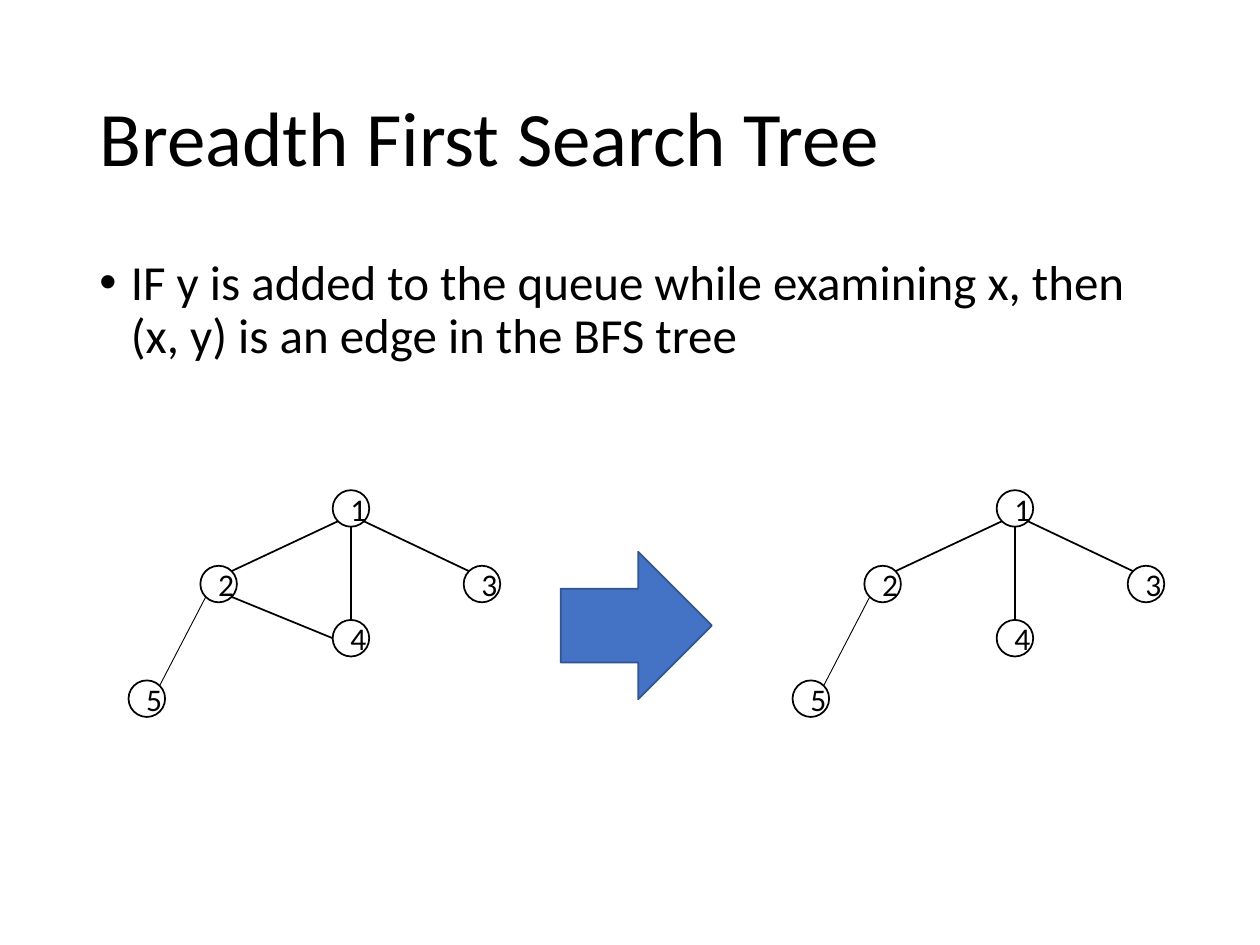
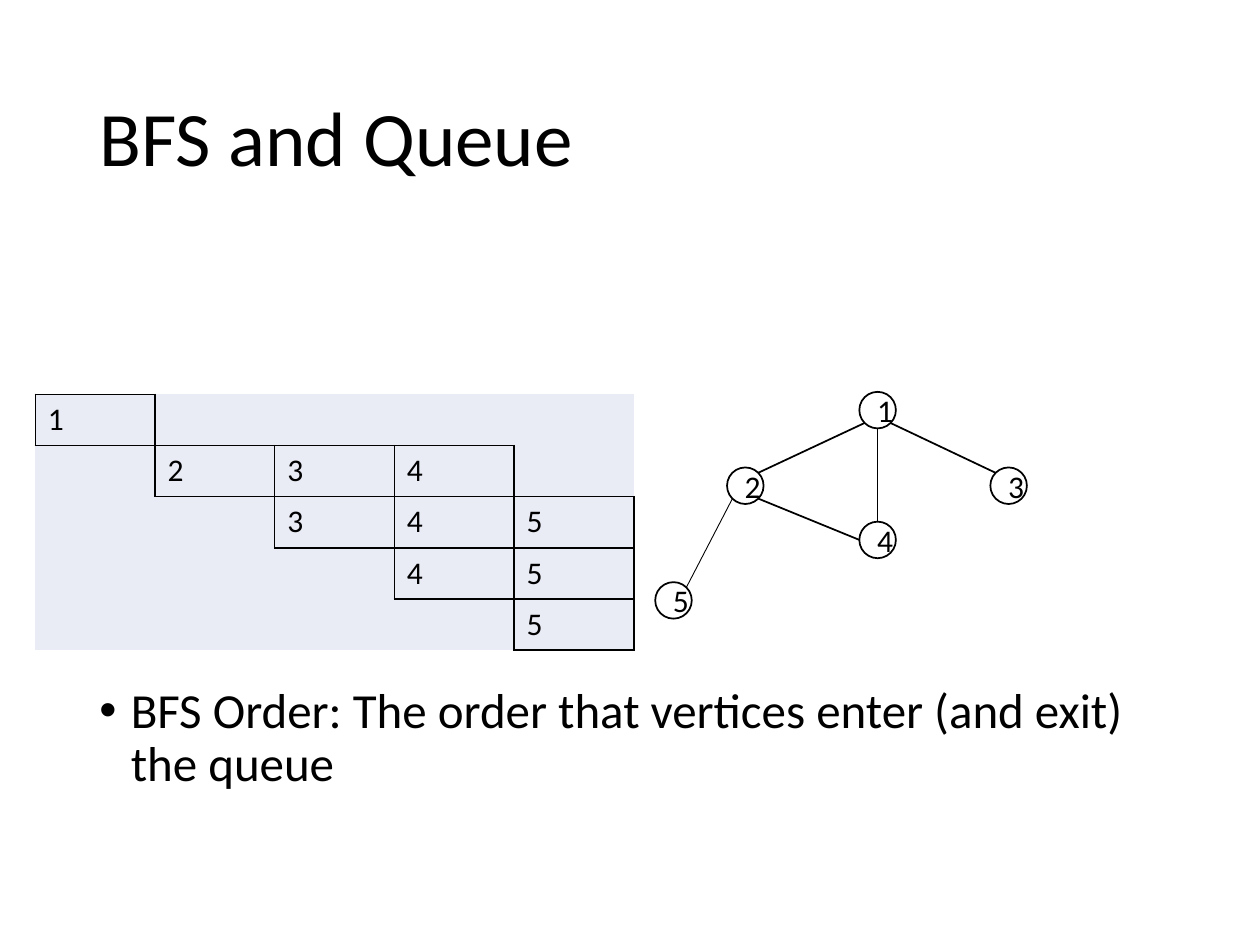
from lxml import etree
from pptx import Presentation
from pptx.dml.color import RGBColor
from pptx.enum.shapes import MSO_CONNECTOR, MSO_SHAPE
from pptx.enum.text import MSO_ANCHOR, PP_ALIGN
from pptx.oxml.ns import qn
from pptx.util import Inches, Pt

# Content: places are (columns, rows) on a grid of 10 by 7.5 one-inch units
COLUMNS, ROWS = 10, 7.5
COLORS = {"ink": "000000", "paper": "FFFFFF", "arrow": "4472C4",
          "arrow_edge": "325491", "cell": "E9EBF5"}
FONT = "Calibri"

TITLE_BOX = (0.69, 0.4, 8.62, 1.45)
NODE_SIZE = 0.29
NODES = {"1": (0, 0), "4": (0, 1.03), "2": (-1.05, 0.6),
         "3": (1.04, 0.6), "5": (-1.62, 1.51)}  # offsets from node 1
SITES = {"top": (0.5, 0), "bottom": (0.5, 1), "left": (0, 0.5),
         "top right": (0.85, 0.15), "bottom right": (0.85, 0.85),
         "bottom left": (0.15, 0.85)}  # shares of a node
TREE_EDGES = [  # from node, site, to node, site, width
    ("2", "top right", "1", "bottom left", 1),
    ("1", "bottom right", "3", "top", 1),
    ("1", "bottom", "4", "top", 1),
    ("2", "bottom left", "5", "top right", 0.5),
]
SITES["top left"] = (0.15, 0.15)
TREE_EDGES[1] = ("1", "bottom right", "3", "top left", 1)
GRAPH_EDGES = TREE_EDGES + [("4", "left", "2", "bottom right", 1)]

SLIDES = [
    {"title": "Breadth First Search Tree",
     "bullet": ["IF y is added to the queue while examining x, then",
                "(x, y) is an edge in the BFS tree"],
     "bullet_box": (0.69, 2, 8.92, 4.76),
     "graphs": [((2.64, 3.89), GRAPH_EDGES), ((7.91, 3.89), TREE_EDGES)],
     "arrow_box": (4.45, 4.38, 1.2, 1.17)},
    {"title": "BFS and Queue",
     "bullet": ["BFS Order: The order that vertices enter (and exit) the queue"],
     "bullet_box": (0.69, 5.4, 8.62, 1.36),
     "graphs": [((6.82, 3.11), GRAPH_EDGES)],
     "queue_box": (0.28, 3.13, 4.75, 2.03),
     "queue": [["1", "", "", "", ""],
               ["", "2", "3", "4", ""],
               ["", "", "3", "4", "5"],
               ["", "", "", "4", "5"],
               ["", "", "", "", "5"]]},
]

# Formats
TITLE = {"size": 44, "paragraph": {"line_spacing": 0.9}}
BULLET = {"size": 28, "paragraph": {"line_spacing": 0.9, "space_before": Pt(10)}}
NODE = {"size": 18, "paragraph": {"alignment": PP_ALIGN.CENTER}}
CELL = {"size": 18, "paragraph": {"alignment": PP_ALIGN.LEFT}}
PLAIN_TABLE = {"first_row": False, "horz_banding": False}
BORDERS = {"a:lnL": (0, -1), "a:lnR": (0, 1), "a:lnT": (-1, 0), "a:lnB": (1, 0)}


def rgb(color):
    return RGBColor.from_string(COLORS[color])


def inches(values):
    return [Inches(value) for value in values]


def set_all(target, values):
    for name, value in values.items():
        setattr(target, name, value)


def write(frame, lines, style):
    paragraph = frame.paragraphs[0]
    set_all(paragraph, style["paragraph"])
    for number, line in enumerate(lines):
        if number:
            paragraph.add_line_break()
        run = paragraph.add_run()
        run.text = line
        set_all(run.font, {"name": FONT, "size": Pt(style["size"])})
        run.font.color.rgb = rgb("ink")
    return paragraph


def add_text(slide, box, lines, style, anchor):
    frame = slide.shapes.add_textbox(*inches(box)).text_frame
    set_all(frame, {"word_wrap": True, "vertical_anchor": anchor})
    return write(frame, lines, style)


def add_bullet(slide, box, lines):
    paragraph = add_text(slide, box, lines, BULLET, MSO_ANCHOR.TOP)
    properties = paragraph._p.get_or_add_pPr()
    properties.set("marL", str(Inches(0.25)))
    properties.set("indent", str(-Inches(0.25)))
    etree.SubElement(properties, qn("a:buFont")).set("typeface", "Arial")
    etree.SubElement(properties, qn("a:buChar")).set("char", "•")


def add_filled(slide, kind, box, fill, edge):
    shape = slide.shapes.add_shape(kind, *inches(box))
    shape.shadow.inherit = False
    shape.fill.solid()
    shape.fill.fore_color.rgb = rgb(fill)
    shape.line.color.rgb = rgb(edge)
    shape.line.width = Pt(1)
    return shape


def add_graph(slide, origin, edges):
    corners = {name: (origin[0] + x, origin[1] + y)
               for name, (x, y) in NODES.items()}

    def site(node, side):
        return [corner + share * NODE_SIZE
                for corner, share in zip(corners[node], SITES[side])]

    for name, corner in corners.items():
        node = add_filled(slide, MSO_SHAPE.OVAL,
                          (*corner, NODE_SIZE, NODE_SIZE), "paper", "ink")
        node.text_frame.vertical_anchor = MSO_ANCHOR.MIDDLE
        write(node.text_frame, [name], NODE)
    for start, start_side, end, end_side, width in edges:
        ends = site(start, start_side) + site(end, end_side)
        edge = slide.shapes.add_connector(MSO_CONNECTOR.STRAIGHT, *inches(ends))
        edge.line.color.rgb = rgb("ink")
        edge.line.width = Pt(width)
        etree.SubElement(edge._element.spPr, qn("a:effectLst"))


def add_border(cell, side, visible):
    line = etree.SubElement(cell._tc.get_or_add_tcPr(), qn(side))
    line.set("w", str(Pt(1)))
    if visible:
        fill = etree.SubElement(line, qn("a:solidFill"))
        etree.SubElement(fill, qn("a:srgbClr")).set("val", COLORS["ink"])
    else:
        etree.SubElement(line, qn("a:noFill"))


def add_queue(slide, box, rows):
    size = len(rows), len(rows[0])
    table = slide.shapes.add_table(*size, *inches(box)).table
    set_all(table, PLAIN_TABLE)
    taken = {(r, c) for r, row in enumerate(rows)
             for c, vertex in enumerate(row) if vertex}
    for r, row in enumerate(rows):
        for c, vertex in enumerate(row):
            cell = table.cell(r, c)
            if vertex:
                write(cell.text_frame, [vertex], CELL)
            # A border shows wherever it touches a queued vertex
            for side, (down, right) in BORDERS.items():
                add_border(cell, side, taken & {(r, c), (r + down, c + right)})
            cell.fill.solid()
            cell.fill.fore_color.rgb = rgb("cell")


def main():
    deck = Presentation()
    set_all(deck, {"slide_width": Inches(COLUMNS), "slide_height": Inches(ROWS)})
    for content in SLIDES:
        slide = deck.slides.add_slide(deck.slide_layouts[6])
        add_text(slide, TITLE_BOX, [content["title"]], TITLE, MSO_ANCHOR.MIDDLE)
        add_bullet(slide, content["bullet_box"], content["bullet"])
        for origin, edges in content["graphs"]:
            add_graph(slide, origin, edges)
        if "arrow_box" in content:
            add_filled(slide, MSO_SHAPE.RIGHT_ARROW, content["arrow_box"],
                       "arrow", "arrow_edge")
        if "queue" in content:
            add_queue(slide, content["queue_box"], content["queue"])
    deck.save("out.pptx")


if __name__ == "__main__":
    main()
